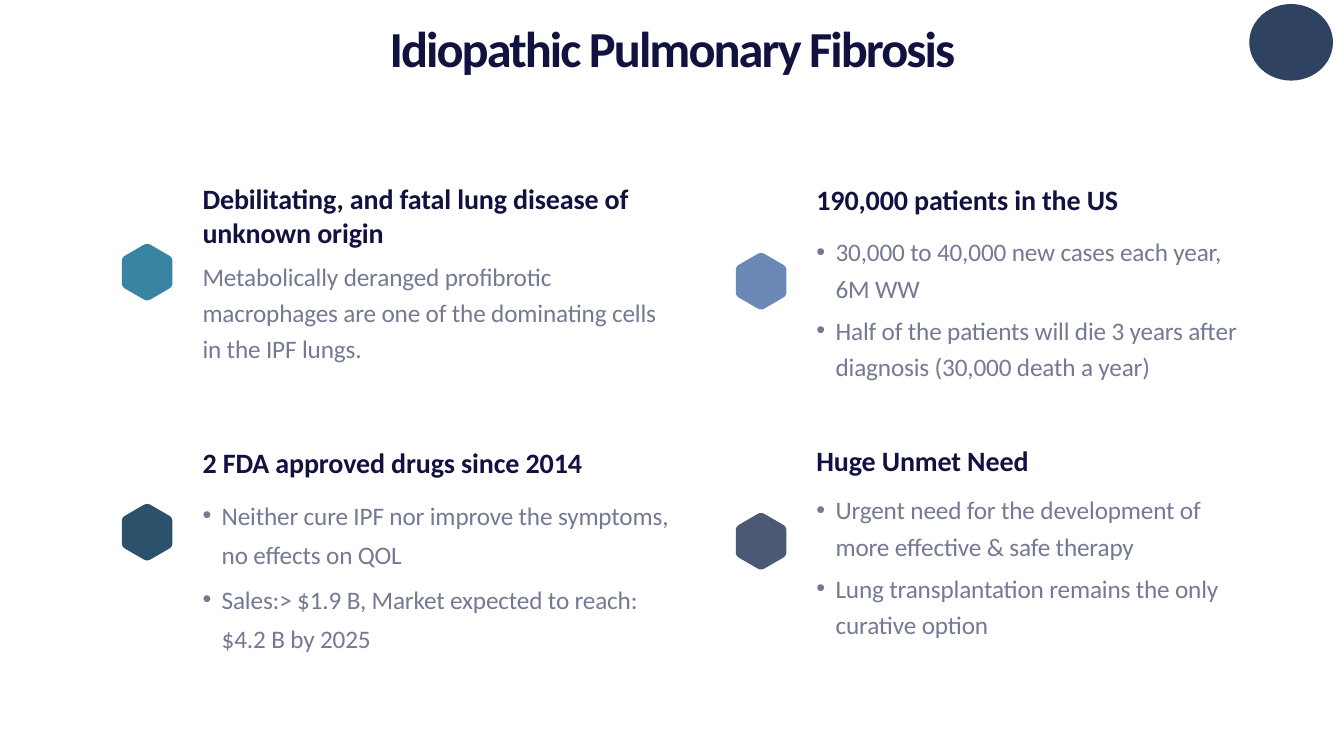
from dataclasses import dataclass
from math import cos, pi, sin

from lxml.etree import SubElement
from pptx import Presentation
from pptx.dml.color import RGBColor
from pptx.enum.shapes import MSO_SHAPE
from pptx.enum.text import MSO_ANCHOR, MSO_AUTO_SIZE, PP_ALIGN
from pptx.oxml.ns import qn
from pptx.util import Inches, Pt

SLIDE_WIDTH, SLIDE_HEIGHT = Inches(13.33), Inches(7.5)
GRID_COLUMNS, GRID_ROWS = 100, 75


@dataclass(frozen=True)
class Theme:
    font: str = "Calibri"
    title_size: int = 36
    heading_size: int = 20
    body_size: int = 18
    ink: str = "111240"
    body: str = "747994"
    badge: str = "304262"


@dataclass(frozen=True)
class Topic:
    column: int
    row: int
    marker_color: str
    heading: str
    heading_bottom: float
    heading_height: float
    details: tuple
    details_top: float
    line_spacing: float = 1.2
    bulleted: bool = True


THEME = Theme()
COLUMN_PITCH, ROW_PITCH = 45.68, 25.8
TEXT_LEFT, TEXT_WIDTHS = 14.33, (36.75, 33.15)
MARKER_CENTER_X, MARKER_CENTERS_Y = 10.95, (27, 27.9)
MARKER_RADIUS = Inches(0.29)
CORNER_SHARE, CORNER_STEPS = 0.14, 6

TOPICS = (
    Topic(0, 0, "3984A3",
          "Debilitating, and fatal lung disease of unknown origin", 25.2, 7.7,
          ("Metabolically deranged profibrotic macrophages are one of the "
           "dominating cells in the IPF lungs.",), 24.8, bulleted=False),
    Topic(0, 1, "2B526A", "2 FDA approved drugs since 2014", 48, 4.4,
          ("Neither cure IPF nor improve the symptoms, no effects on QOL",
           "Sales:> $1.9 B, Market expected to reach: $4.2 B by 2025"),
          48.2, line_spacing=1.3),
    Topic(1, 0, "6C88B7", "190,000 patients in the US", 21.9, 4.4,
          ("30,000 to 40,000 new cases each year, 6M WW",
           "Half of the patients will die 3 years after diagnosis "
           "(30,000 death a year)"), 22.4),
    Topic(1, 1, "4C5974", "Huge Unmet Need", 47.8, 4.4,
          ("Urgent need for the development of more effective & safe therapy",
           "Lung transplantation remains the only curative option"), 48),
)


def across(columns):
    return round(SLIDE_WIDTH * columns / GRID_COLUMNS)


def down(rows):
    return round(SLIDE_HEIGHT * rows / GRID_ROWS)


def area(left, top, width, height):
    return across(left), down(top), across(width), down(height)


def format_runs(paragraph, size, color, bold=False, tracking=-0.1):
    for run in paragraph.runs:
        run.font.name = THEME.font
        run.font.size = Pt(size)
        run.font.bold = bold
        run.font.color.rgb = RGBColor.from_string(color)
        run.font._element.set("spc", str(round(tracking * 100)))


def add_bullet(paragraph):
    properties = paragraph._p.get_or_add_pPr()
    properties.set("marL", str(Inches(0.19)))
    properties.set("indent", str(-Inches(0.19)))
    SubElement(properties, qn("a:buFont")).set("typeface", "Arial")
    SubElement(properties, qn("a:buChar")).set("char", "•")


def paint(shape, color):
    shape.shadow.inherit = False
    shape.fill.solid()
    shape.fill.fore_color.rgb = RGBColor.from_string(color)
    shape.line.fill.background()


def add_title(slide, wording):
    title = slide.shapes.title
    title.left, title.top, title.width, title.height = area(6.9, 1.9, 86.27, 7.8)
    frame = title.text_frame
    frame.text = wording
    frame.word_wrap = True
    frame.auto_size = MSO_AUTO_SIZE.NONE
    frame.vertical_anchor = MSO_ANCHOR.TOP
    paragraph = frame.paragraphs[0]
    paragraph.alignment = PP_ALIGN.CENTER
    paragraph.line_spacing = 0.9
    format_runs(paragraph, THEME.title_size, THEME.ink, True, -1.4)


def add_text(slide, bounds, wording, anchor):
    frame = slide.shapes.add_textbox(*bounds).text_frame
    frame.word_wrap = True
    frame.vertical_anchor = anchor
    frame.text = "\n".join(wording)
    return frame.paragraphs


def add_heading(slide, topic, left, width):
    top = topic.heading_bottom - topic.heading_height
    bounds = area(left, top, width, topic.heading_height)
    for paragraph in add_text(slide, bounds, [topic.heading], MSO_ANCHOR.BOTTOM):
        format_runs(paragraph, THEME.heading_size, THEME.ink, True)


def add_details(slide, topic, left, width):
    bounds = area(left, topic.details_top, width, 16)
    paragraphs = add_text(slide, bounds, topic.details, MSO_ANCHOR.TOP)
    for index, paragraph in enumerate(paragraphs):
        paragraph.line_spacing = topic.line_spacing
        if index:
            paragraph.space_before = Pt(4)
        if topic.bulleted:
            add_bullet(paragraph)
        format_runs(paragraph, THEME.body_size, THEME.body)


def toward(start, end, share):
    return tuple(a + (b - a) * share for a, b in zip(start, end))


def add_marker(slide, center_x, center_y, color):
    corners = [(center_x + MARKER_RADIUS * sin(k * pi / 3),
                center_y - MARKER_RADIUS * cos(k * pi / 3)) for k in range(6)]
    outline = []
    for k, corner in enumerate(corners):
        entry = toward(corner, corners[k - 1], CORNER_SHARE)
        leave = toward(corner, corners[(k + 1) % 6], CORNER_SHARE)
        for step in range(CORNER_STEPS + 1):
            t = step / CORNER_STEPS
            outline.append(toward(toward(entry, corner, t),
                                  toward(corner, leave, t), t))
    builder = slide.shapes.build_freeform(*map(round, outline[0]))
    builder.add_line_segments([tuple(map(round, point)) for point in outline[1:]])
    paint(builder.convert_to_shape(), color)


def add_topic(slide, topic):
    shift = topic.column * COLUMN_PITCH
    width = TEXT_WIDTHS[topic.column]
    add_heading(slide, topic, TEXT_LEFT + shift, width)
    add_details(slide, topic, TEXT_LEFT + shift, width)
    marker_y = MARKER_CENTERS_Y[topic.column] + topic.row * ROW_PITCH
    add_marker(slide, across(MARKER_CENTER_X + shift), down(marker_y),
               topic.marker_color)


def main():
    deck = Presentation()
    deck.slide_width, deck.slide_height = SLIDE_WIDTH, SLIDE_HEIGHT
    slide = deck.slides.add_slide(deck.slide_layouts.get_by_name("Title Only"))
    add_title(slide, "Idiopathic Pulmonary Fibrosis")
    for topic in TOPICS:
        add_topic(slide, topic)
    badge = slide.shapes.add_shape(MSO_SHAPE.OVAL, *area(92.95, 0.4, 6.23, 7.6))
    paint(badge, THEME.badge)
    deck.save("out.pptx")


if __name__ == "__main__":
    main()
